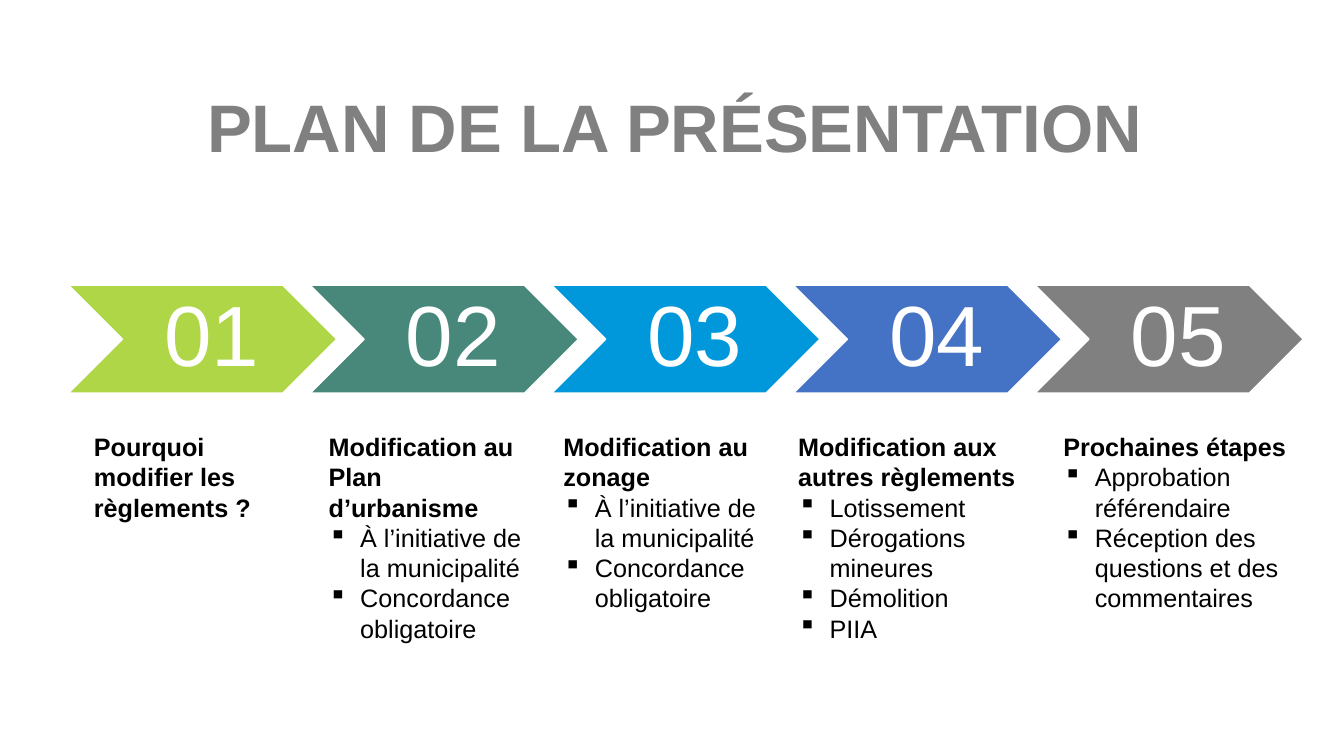
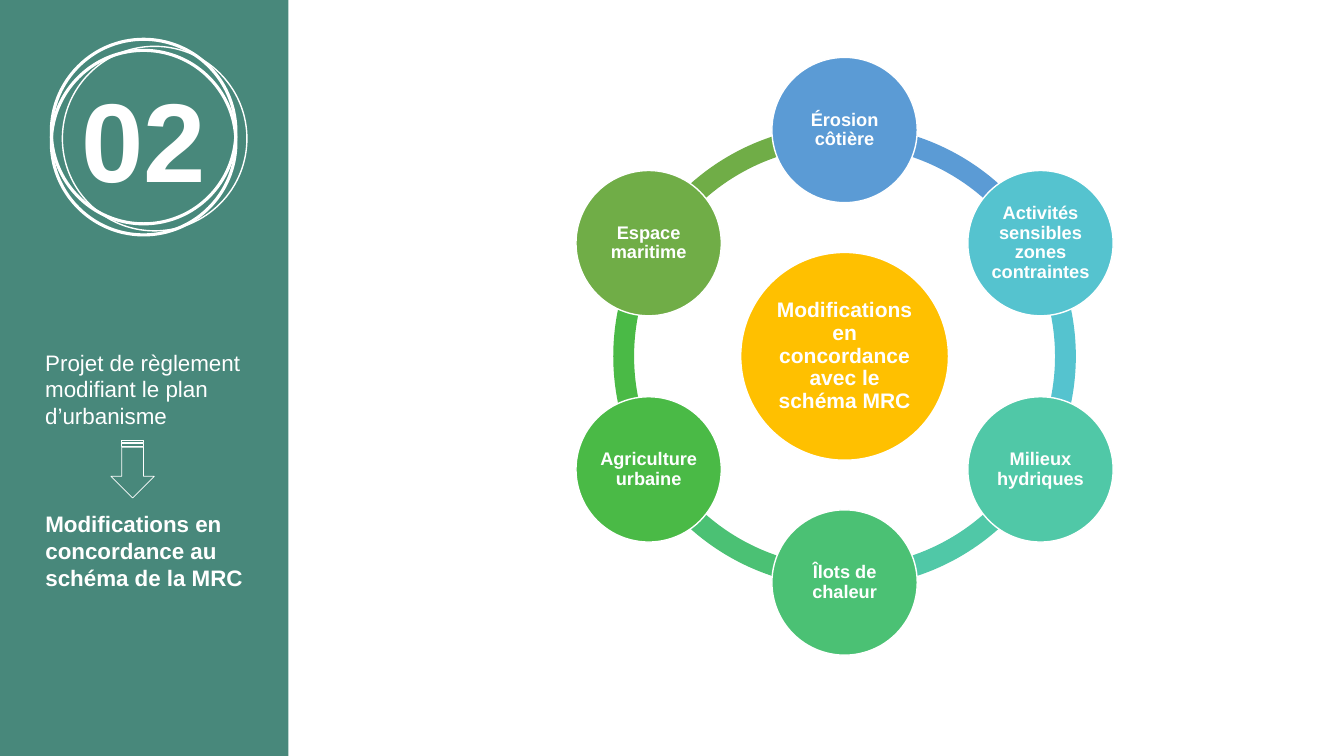
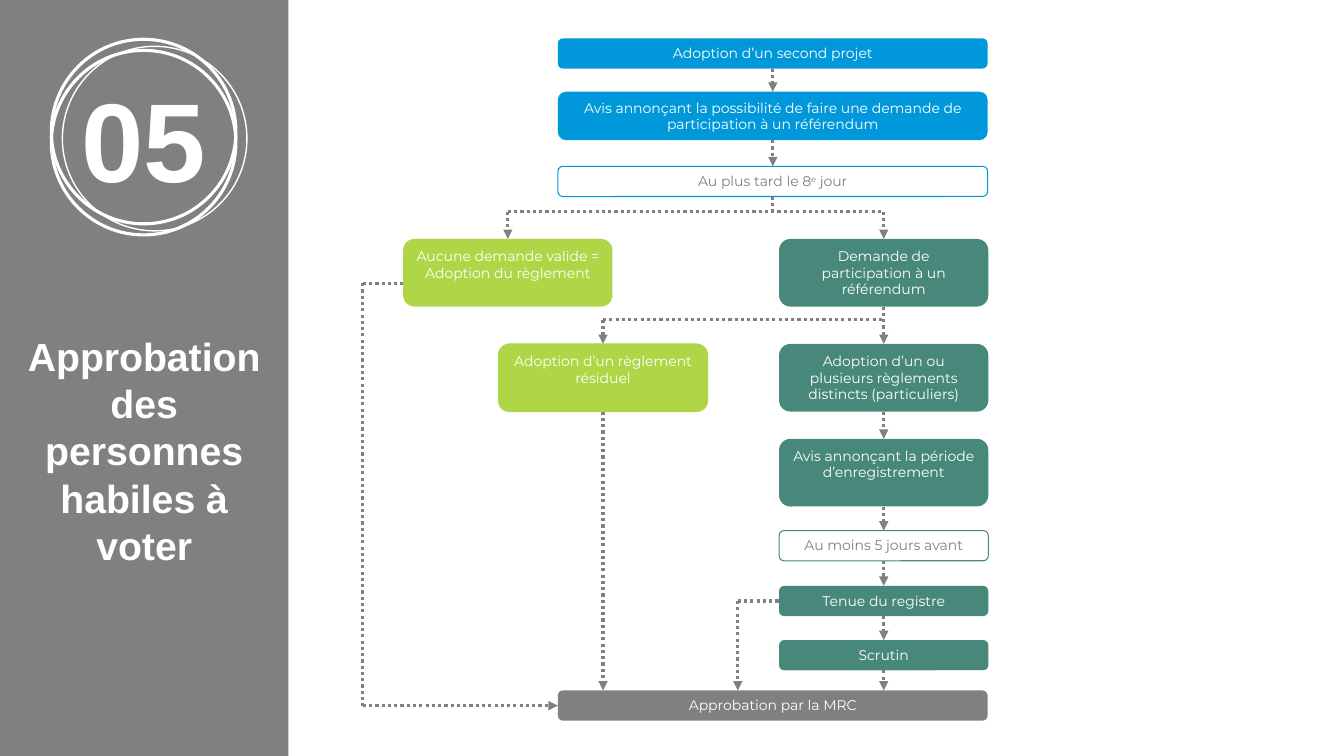
import math
from dataclasses import dataclass, replace
from typing import Any, NamedTuple, Optional, Union

import pptx
import pptx.dml.color
import pptx.enum.dml
import pptx.enum.shapes
import pptx.enum.text
import pptx.oxml.ns
import pptx.util
from lxml import etree

Pt = pptx.util.Pt
Kind = pptx.enum.shapes.MSO_SHAPE
Align = pptx.enum.text.PP_ALIGN
Anchor = pptx.enum.text.MSO_ANCHOR
qn = pptx.oxml.ns.qn


@dataclass(frozen=True)
class Theme:
    white: str = "FFFFFF"
    black: str = "000000"
    grey: str = "808080"
    lime: str = "AED647"
    teal: str = "48887B"
    blue: str = "0098DA"
    navy: str = "4472C4"
    gold: str = "FFC000"
    sans: str = "Arial"
    flow: str = "Montserrat"
    banner: int = 48
    digit: int = 61
    number: int = 80
    head: int = 28
    body: int = 18
    side: int = 16
    hub: int = 15
    node: int = 13
    small: int = 10


THEME = Theme()


@dataclass(frozen=True)
class Look:
    size: int
    colour: str
    bold: bool = False
    font: str = THEME.sans
    align: Any = Align.LEFT
    space: Optional[float] = None


class Box(NamedTuple):
    left: float
    top: float
    width: float
    height: float


class Step(NamedTuple):
    colour: str
    left: float
    width: float
    head: str
    points: tuple[str, ...] = ()


class Node(NamedTuple):
    colour: str
    text: str


class Card(NamedTuple):
    box: Box
    text: str
    fill: Optional[str] = None
    line: Optional[str] = None


class Spot(NamedTuple):
    x: float
    y: float


class Port(NamedTuple):
    shape: Any
    side: int


class Wire(NamedTuple):
    start: Union[Spot, Port]
    end: Union[Spot, Port]
    arrow: bool = True


def rgb(code: str) -> Any:
    return pptx.dml.color.RGBColor.from_string(code)


def style(para: Any, look: Look) -> None:
    para.alignment = look.align
    if look.space:
        para.line_spacing = look.space
    para.font.name = look.font
    para.font.size = Pt(look.size)
    para.font.bold = look.bold
    para.font.color.rgb = rgb(look.colour)


def write(shape: Any, text: str, look: Look, anchor: Any = Anchor.TOP,
          pads: tuple[float, ...] = (7.2, 3.6, 7.2, 3.6)) -> Any:
    frame = shape.text_frame
    frame.word_wrap = True
    frame.auto_size = pptx.enum.text.MSO_AUTO_SIZE.NONE
    frame.vertical_anchor = anchor
    frame.margin_left, frame.margin_top, frame.margin_right, frame.margin_bottom = map(Pt, pads)
    para = frame.paragraphs[0]
    for rank, part in enumerate(text.split("^")):
        run = para.add_run()
        run.text = part
        if rank == 1:
            run._r.get_or_add_rPr().set("baseline", "30000")
    style(para, look)
    return frame


def bullet(frame: Any, text: str, look: Look) -> None:
    para = frame.add_paragraph()
    para.text = text
    props = para._p.get_or_add_pPr()
    props.set("marL", str(Pt(22.5)))
    props.set("indent", str(-Pt(22.5)))
    etree.SubElement(props, qn("a:buChar")).set("char", "▪")
    style(para, look)


def draw(slide: Any, kind: Any, box: Box, fill: Optional[str] = None,
         line: Optional[str] = None, weight: float = 1) -> Any:
    shape = slide.shapes.add_shape(kind, *map(Pt, box))
    shape.shadow.inherit = False
    if fill:
        shape.fill.solid()
        shape.fill.fore_color.rgb = rgb(fill)
    else:
        shape.fill.background()
    if line:
        shape.line.color.rgb = rgb(line)
        shape.line.width = Pt(weight)
    else:
        shape.line.fill.background()
    return shape


def label(slide: Any, box: Box, text: str, look: Look) -> Any:
    return write(slide.shapes.add_textbox(*map(Pt, box)), text, look)


def title(slide: Any, box: Box, text: str, look: Look) -> None:
    shape = slide.shapes.title
    shape.left, shape.top, shape.width, shape.height = map(Pt, box)
    write(shape, text, look)
    shape.element.getparent().append(shape.element)


def disc(x: float, y: float, radius: float) -> Box:
    return Box(x - radius, y - radius, 2 * radius, 2 * radius)


def join(slide: Any, wire: Wire) -> None:
    ends = [end if isinstance(end, Spot) else Spot(0, 0) for end in (wire.start, wire.end)]
    link = slide.shapes.add_connector(
        pptx.enum.shapes.MSO_CONNECTOR.STRAIGHT, *(Pt(v) for end in ends for v in end))
    if isinstance(wire.start, Port):
        link.begin_connect(*wire.start)
    if isinstance(wire.end, Port):
        link.end_connect(*wire.end)
    link.line.color.rgb = rgb(THEME.grey)
    link.line.width = Pt(2.25)
    link.line.dash_style = pptx.enum.dml.MSO_LINE.ROUND_DOT
    props = link.element.spPr
    if wire.arrow:
        etree.SubElement(props.find(qn("a:ln")), qn("a:tailEnd")).set("type", "triangle")
    etree.SubElement(props, qn("a:effectLst"))


def panel(slide: Any, number: str, colour: str) -> None:
    draw(slide, Kind.RECTANGLE, Box(0, 0, 206, 540), colour)
    label(slide, Box(51, 46.8, 165, 104.4), number, Look(THEME.number, THEME.white, True))
    for left, top, weight in ((36.7, 36, 2.25), (44.6, 33.1, 1), (36.7, 28.1, 2.25)):
        draw(slide, Kind.OVAL, Box(left, top, 131.8, 131.8), None, THEME.white, weight)


def agenda(slide: Any) -> None:
    title(slide, Box(105, 57, 754.5, 65.5), "PLAN DE LA PRÉSENTATION",
          Look(THEME.banner, THEME.grey, True, align=Align.CENTER))
    own, duty = "À l’initiative de la municipalité", "Concordance obligatoire"
    steps = (
        Step(THEME.lime, 60, 157, "Pourquoi modifier les règlements ?"),
        Step(THEME.teal, 227.7, 157, "Modification au Plan d’urbanisme", (own, duty)),
        Step(THEME.blue, 395.3, 157, "Modification au zonage", (own, duty)),
        Step(THEME.navy, 563, 182, "Modification aux autres règlements",
             ("Lotissement", "Dérogations mineures", "Démolition", "PIIA")),
        Step(THEME.grey, 752.4, 182, "Prochaines étapes",
             ("Approbation référendaire", "Réception des questions et des commentaires")),
    )
    digit = Look(THEME.digit, THEME.white, align=Align.CENTER, space=0.9)
    head = Look(THEME.body, THEME.black, True)
    for rank, step in enumerate(steps):
        shape = draw(slide, Kind.CHEVRON, Box(49 + 172.6 * rank, 203.8, 191.5, 77),
                     step.colour, THEME.white)
        write(shape, f"{rank + 1:02}", digit, Anchor.MIDDLE, (19.4, 6.5, 6.5, 6.5))
        frame = label(slide, Box(step.left, 304.6, step.width, 160), step.head, head)
        for point in step.points:
            bullet(frame, point, replace(head, bold=False))


def wheel(slide: Any) -> None:
    panel(slide, "02", THEME.teal)
    look = Look(THEME.side, THEME.white)
    label(slide, Box(25.2, 245.5, 165, 66), "Projet de règlement modifiant le plan d’urbanisme", look)
    title(slide, Box(25.2, 361, 165, 66), "Modifications en concordance au schéma de la MRC",
          replace(look, bold=True))
    arrow = draw(slide, Kind.STRIPED_RIGHT_ARROW, Box(74.2, 319.7, 41, 31), None, THEME.white, 0.5)
    arrow.rotation = 90

    nodes = (
        Node("5B9BD5", "Érosion côtière"),
        Node("55C3CF", "Activités sensibles zones contraintes"),
        Node("50C8A7", "Milieux hydriques"),
        Node("4BC174", "Îlots de chaleur"),
        Node("4ABA46", "Agriculture urbaine"),
        Node("70AD47", "Espace maritime"),
    )
    x, y, reach, turn = 603.3, 254.5, 161.6, 360 / len(nodes)
    for rank, node in enumerate(nodes):
        arc = draw(slide, Kind.BLOCK_ARC, disc(x, y, 165.2), node.colour)
        for slot in (0, 1):
            arc.adjustments[slot] = (270 + turn * (rank + slot)) % 360 * 0.6
        arc.adjustments[2] = 0.045

    look = Look(THEME.hub, THEME.white, True, align=Align.CENTER, space=0.9)
    pads = (1.4,) * 4
    hub = draw(slide, Kind.OVAL, disc(x, y, 74.2), THEME.gold, THEME.white)
    write(hub, "Modifications en concordance avec le schéma MRC", look, Anchor.MIDDLE, pads)
    for rank, node in enumerate(nodes):
        angle = math.radians(turn * rank)
        place = disc(x + reach * math.sin(angle), y - reach * math.cos(angle), 51.9)
        shape = draw(slide, Kind.OVAL, place, node.colour, THEME.white)
        write(shape, node.text, replace(look, size=THEME.node), Anchor.MIDDLE, pads)


def chart(slide: Any) -> None:
    panel(slide, "05", THEME.grey)
    title(slide, Box(0, 234, 206, 177), "Approbation des personnes habiles à voter",
          Look(THEME.head, THEME.white, True, align=Align.CENTER))

    def wide(top: float, height: float = 21.6) -> Box:
        return Box(398.5, top, 307, height)

    def slim(top: float, height: float = 48.3, left: float = 556.5) -> Box:
        return Box(left, top, 149.5, height)

    low = 21.6
    cards = {
        "draft": Card(wide(27.4), "Adoption d’un second projet", THEME.blue),
        "call": Card(wide(65.5, 34.6), "Avis annonçant la possibilité de faire une demande de "
                     "participation à un référendum", THEME.blue),
        "limit": Card(wide(118.8), "Au plus tard le 8^e^ jour", None, THEME.blue),
        "none": Card(slim(170.7, left=288), "Aucune demande valide = Adoption du règlement", THEME.lime),
        "ask": Card(slim(170.7), "Demande de participation à un référendum", THEME.teal),
        "split": Card(slim(245.7), "Adoption d’un ou plusieurs règlements distincts (particuliers)",
                      THEME.teal),
        "term": Card(slim(313.5), "Avis annonçant la période d’enregistrement", THEME.teal),
        "days": Card(slim(379, low), "Au moins 5 jours avant", None, THEME.teal),
        "roll": Card(slim(418.5, low), "Tenue du registre", THEME.teal),
        "vote": Card(slim(457.2, low), "Scrutin", THEME.teal),
        "final": Card(wide(493.2), "Approbation par la MRC", THEME.grey),
        "rest": Card(slim(245.7, left=356), "Adoption d’un règlement résiduel",
                     THEME.lime, THEME.lime),
    }
    shapes = {}
    for name, card in cards.items():
        shape = draw(slide, Kind.ROUNDED_RECTANGLE, card.box, card.fill, card.line, 0.75)
        ink = THEME.white if card.fill else THEME.grey
        write(shape, card.text, Look(THEME.small, ink, font=THEME.flow, align=Align.CENTER))
        shapes[name] = shape

    def port(name: str, side: int) -> Port:
        return Port(shapes[name], side)

    def mid(name: str) -> float:
        return cards[name].box.left + cards[name].box.width / 2

    chain = (("draft", "call"), ("call", "limit"), ("ask", "split"), ("split", "term"),
             ("term", "days"), ("days", "roll"), ("roll", "vote"))
    wires = [Wire(port(first, 2), port(last, 0)) for first, last in chain]
    fork, branch, edge, lane = 151.2, 228.3, 259.2, 527
    exit_y, roll_y, final_y, floor = 202.3, 429.3, 504, 493.2
    wires += [
        Wire(port("limit", 2), Spot(mid("limit"), fork), False),
        Wire(Spot(mid("none"), fork), Spot(mid("ask"), fork), False),
        Wire(Spot(mid("none"), fork), port("none", 0)),
        Wire(Spot(mid("ask"), fork), port("ask", 0)),
        Wire(Spot(mid("rest"), branch), Spot(mid("ask"), branch), False),
        Wire(Spot(mid("rest"), branch), port("rest", 0)),
        Wire(port("rest", 2), Spot(mid("rest"), floor)),
        Wire(port("vote", 2), Spot(mid("vote"), floor)),
        Wire(Spot(edge, exit_y), Spot(cards["none"].box.left, exit_y), False),
        Wire(Spot(edge, exit_y), Spot(edge, final_y), False),
        Wire(Spot(edge, final_y), port("final", 1)),
        Wire(Spot(lane, roll_y), port("roll", 1), False),
        Wire(Spot(lane, roll_y), Spot(lane, floor)),
    ]
    for wire in wires:
        join(slide, wire)


def main() -> None:
    deck = pptx.Presentation()
    deck.slide_width, deck.slide_height = Pt(960), Pt(540)
    for build in (agenda, wheel, chart):
        build(deck.slides.add_slide(deck.slide_layouts[5]))
    deck.save("out.pptx")


if __name__ == "__main__":
    main()
